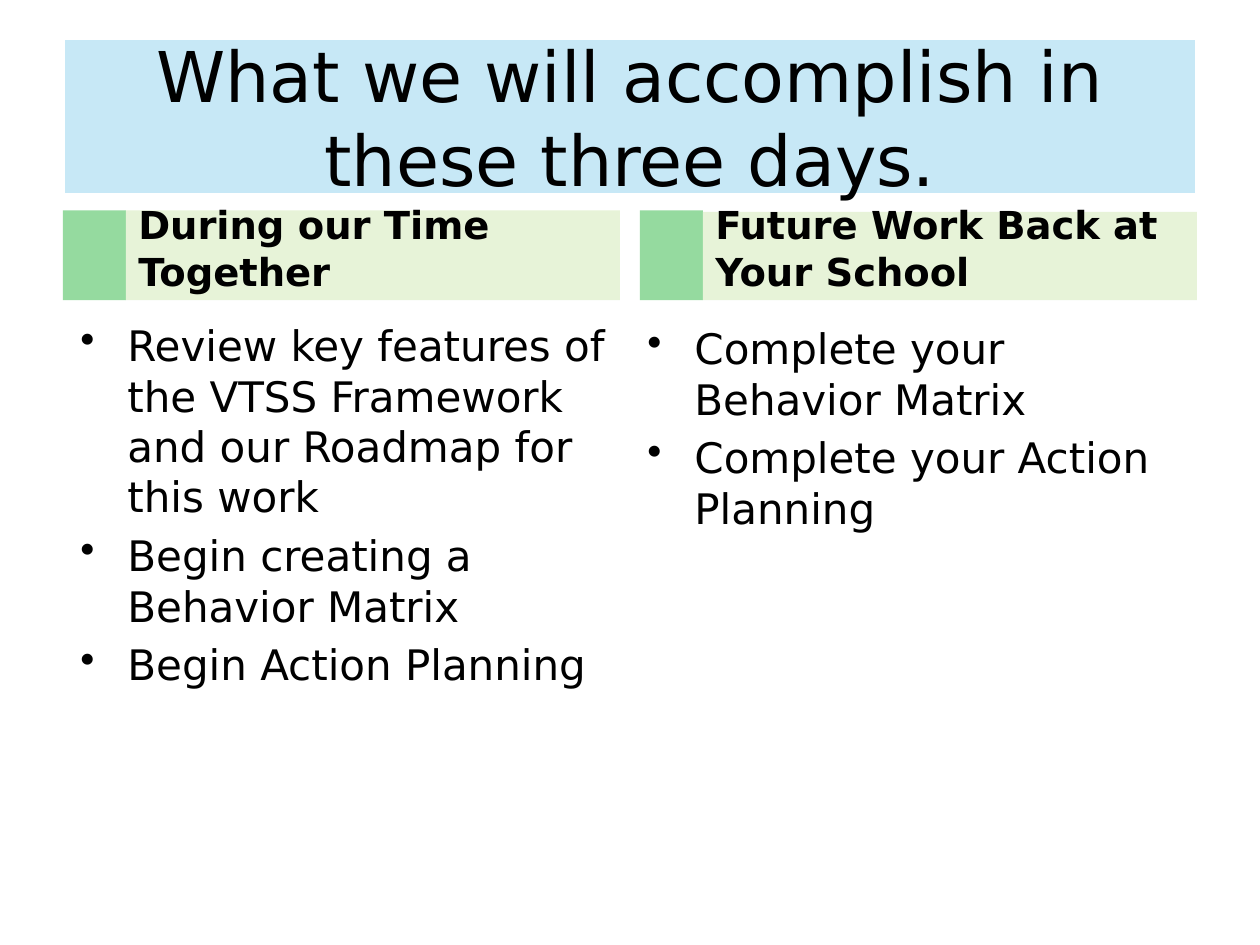
from lxml.etree import SubElement
from pptx import Presentation
from pptx.dml.color import RGBColor
from pptx.enum.shapes import MSO_SHAPE
from pptx.enum.text import MSO_ANCHOR, MSO_AUTO_SIZE, PP_ALIGN
from pptx.oxml.ns import qn
from pptx.util import Cm, Pt

# Content
TITLE = "What we will accomplish in these three days."
COLUMNS = [
    {
        "heading": "During our Time Together",
        "items": [
            "Review key features of the VTSS Framework and our Roadmap for this work",
            "Begin creating a Behavior Matrix",
            "Begin Action Planning",
        ],
        "left": 1.27, "heading_top": 4.24, "list_left": 1.37, "list_top": 6.32,
    },
    {
        "heading": "Future Work Back at Your School",
        "items": ["Complete your Behavior Matrix", "Complete your Action Planning"],
        "left": 12.9, "heading_top": 4.27, "list_left": 12.8, "list_top": 6.38,
    },
]

# Style
FONT = "DejaVu Sans"
COLORS = {
    "title": "A9DCF2",
    "marker": "95DA9F",
    "heading": "E7F3D8",
    "text": "000000",
    "outline": "FFFFFF",
}
BAND_TOP, BAND_BOTTOM = 4.24, 6.05
MARKER_WIDTH, HEADING_WIDTH = 1.27, 9.96
LIST_WIDTH, LIST_HEIGHT = 11.23, 10.97
INDENT = Cm(0.95)


def color(name):
    return RGBColor.from_string(COLORS[name])


def paint(shape, name):
    shape.fill.solid()
    shape.fill.fore_color.rgb = color(name)


def add_block(page, left, top, width, name):
    """Add a filled rectangle that ends at the bottom of the heading band."""
    block = page.shapes.add_shape(
        MSO_SHAPE.RECTANGLE, Cm(left), Cm(top), Cm(width), Cm(BAND_BOTTOM - top))
    block.shadow.inherit = False
    block.line.fill.background()
    paint(block, name)
    return block


def write(frame, lines, size, anchor, align=PP_ALIGN.LEFT, bold=False):
    frame.word_wrap = True
    frame.auto_size = MSO_AUTO_SIZE.NONE
    frame.vertical_anchor = anchor
    for index, line in enumerate(lines):
        paragraph = frame.add_paragraph() if index else frame.paragraphs[0]
        paragraph.text = line
        paragraph.alignment = align
        paragraph.font.name = FONT
        paragraph.font.size = Pt(size)
        paragraph.font.bold = bold
        paragraph.font.color.rgb = color("text")


def add_bullets(frame):
    for index, paragraph in enumerate(frame.paragraphs):
        paragraph.space_before = Pt(4.8 if index else 0)
        properties = paragraph._p.get_or_add_pPr()
        properties.set("marL", str(INDENT))
        properties.set("indent", str(-INDENT))
        bullet = properties.makeelement(qn("a:buChar"), {"char": "•"})
        properties.insert_element_before(bullet, "a:tabLst", "a:defRPr", "a:extLst")


def main():
    deck = Presentation()
    deck.slide_width, deck.slide_height = Cm(25.4), Cm(19.05)
    page = deck.slides.add_slide(deck.slide_layouts[5])

    # Title
    title = page.shapes.title
    title.left, title.top = Cm(1.27), Cm(0.76)
    title.width, title.height = Cm(22.86), Cm(3.18)
    paint(title, "title")
    tint = title.fill._xPr.find(qn("a:solidFill"))[0]
    SubElement(tint, qn("a:alpha"), val="65000")
    title.line.color.rgb = color("outline")
    title.line.width = Pt(2.25)
    write(title.text_frame, [TITLE], 40, MSO_ANCHOR.MIDDLE, PP_ALIGN.CENTER)

    for column in COLUMNS:
        # Heading with its marker
        add_block(page, column["left"], BAND_TOP, MARKER_WIDTH, "marker")
        heading = add_block(page, column["left"] + MARKER_WIDTH,
                            column["heading_top"], HEADING_WIDTH, "heading")
        write(heading.text_frame, [column["heading"]], 22, MSO_ANCHOR.BOTTOM, bold=True)

        # Bulleted list
        box = page.shapes.add_textbox(
            Cm(column["list_left"]), Cm(column["list_top"]), Cm(LIST_WIDTH), Cm(LIST_HEIGHT))
        write(box.text_frame, column["items"], 24, MSO_ANCHOR.TOP)
        add_bullets(box.text_frame)

    deck.save("out.pptx")


if __name__ == "__main__":
    main()
